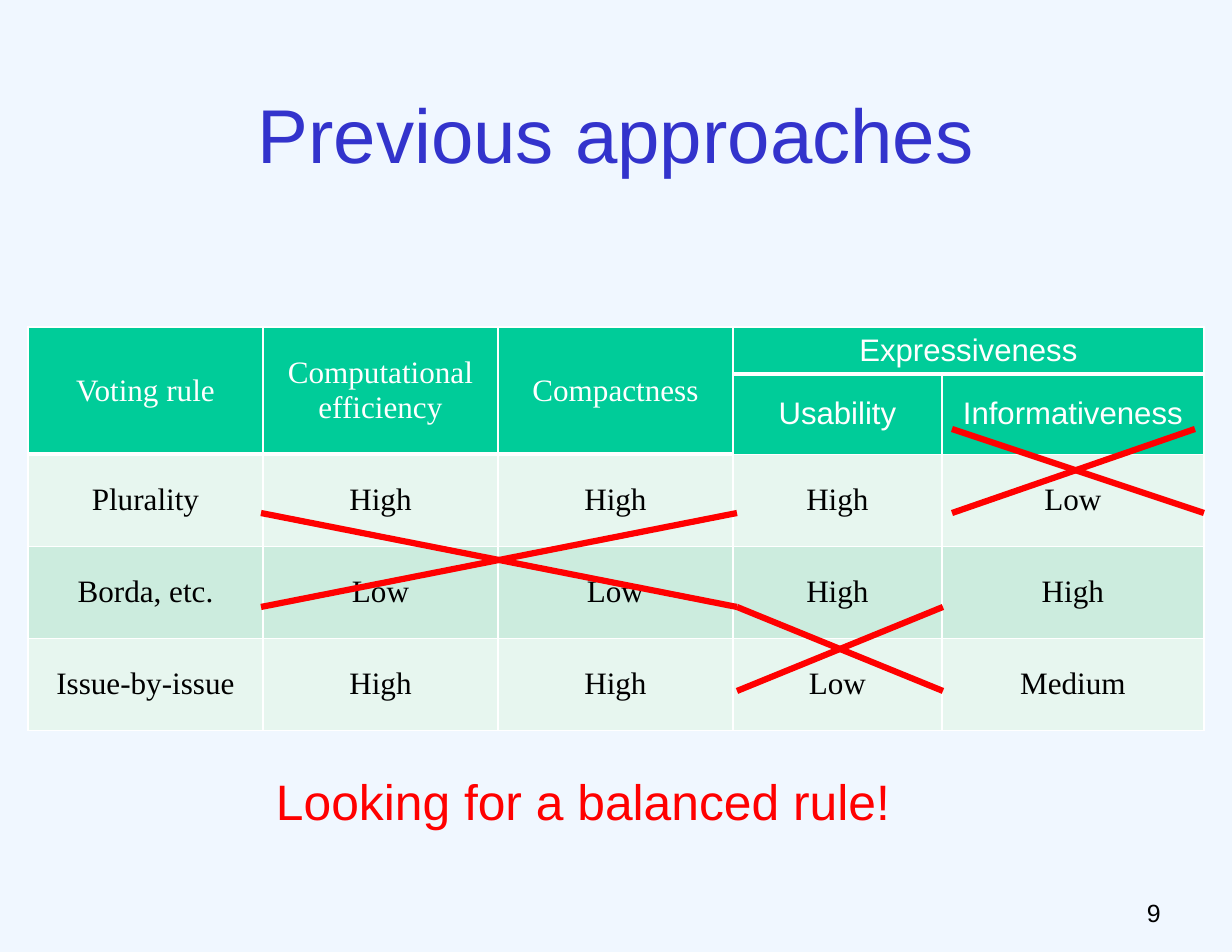
"""Build the slide that compares voting rules in a table with crossed-out weak spots."""
from dataclasses import dataclass

from lxml import etree
from pptx import Presentation
from pptx import util as u
from pptx.dml.color import RGBColor
from pptx.enum import shapes, text
from pptx.oxml import ns

SCALE = 914400 / 112
COLORS = {
    "page": "F0F7FF", "title": "3333CC", "header": "00CC99", "light": "E7F6EF",
    "dark": "CCECDE", "white": "FFFFFF", "black": "000000", "red": "FF0000",
}
SANS, SERIF = "Arial", "Times New Roman"
COLUMNS = (235, 235, 235, 209, 262)
ROWS = (47, 79, 92, 92, 92)
HEADER_ROWS = 2
SPANNED = 3
CONTENT = (
    ("Voting rule", "Computational\nefficiency", "Compactness", "Expressiveness", ""),
    ("", "", "", "Usability", "Informativeness"),
    ("Plurality", "High", "High", "High", "Low"),
    ("Borda, etc.", "Low", "Low", "High", "High"),
    ("Issue-by-issue", "High", "High", "Low", "Medium"),
)


@dataclass(frozen=True)
class Style:
    size: int
    color: str
    font: str = SANS
    align: text.PP_ALIGN = text.PP_ALIGN.CENTER
    spacing: float = 1.0


@dataclass(frozen=True)
class Label:
    words: str
    left: int
    top: int
    width: int
    height: int
    style: Style
    anchor: text.MSO_ANCHOR = text.MSO_ANCHOR.TOP


@dataclass(frozen=True)
class Cross:
    left: int
    top: int
    right: int
    bottom: int
    rising_right: int


LABELS = (
    Label("9", 887, 884, 286, 65,
          Style(16, "black", align=text.PP_ALIGN.RIGHT, spacing=1.25)),
    Label("Previous approaches", 62, 38, 1107, 157,
          Style(49, "title", spacing=1.36), text.MSO_ANCHOR.MIDDLE),
    Label("Looking for a balanced rule!", 56, 747, 1055, 83,
          Style(32, "red", spacing=1.29)),
)
CROSSES = (
    Cross(952, 429, 1204, 513, 1195),
    Cross(261, 513, 737, 607, 737),
    Cross(737, 607, 943, 691, 943),
)


def px(length: int) -> int:
    return round(length * SCALE)


def color(name: str) -> RGBColor:
    return RGBColor.from_string(COLORS[name])


def write(frame, words: str, style: Style) -> None:
    for index, line in enumerate(words.split("\n")):
        para = frame.add_paragraph() if index else frame.paragraphs[0]
        para.alignment = style.align
        para.line_spacing = style.spacing
        span = para.add_run()
        span.text = line
        span.font.size = u.Pt(style.size)
        span.font.name = style.font
        span.font.color.rgb = color(style.color)


def draw_label(page, label: Label) -> None:
    box = page.shapes.add_textbox(
        px(label.left), px(label.top), px(label.width), px(label.height))
    frame = box.text_frame
    frame.word_wrap = True
    frame.vertical_anchor = label.anchor
    frame.margin_left = frame.margin_right = u.Inches(0.11)
    frame.margin_top = frame.margin_bottom = u.Inches(0.06)
    write(frame, label.words, label.style)


def draw_cross(page, cross: Cross) -> None:
    for start, end in ((cross.rising_right, cross.left), (cross.left, cross.right)):
        stroke = page.shapes.add_connector(
            shapes.MSO_CONNECTOR.STRAIGHT,
            px(start), px(cross.top), px(end), px(cross.bottom))
        stroke.line.color.rgb = color("red")
        stroke.line.width = u.Pt(4)
        etree.SubElement(stroke._element.spPr, ns.qn("a:effectLst"))


def has_thick_base(row: int, column: int) -> bool:
    return row == 0 or (row == 1 and column < SPANNED)


def set_borders(cell, top: int, bottom: int) -> None:
    properties = cell._tc.get_or_add_tcPr()
    widths = {"a:lnL": 1, "a:lnR": 1, "a:lnT": top, "a:lnB": bottom}
    for index, (tag, width) in enumerate(widths.items()):
        edge = etree.Element(ns.qn(tag), w=str(u.Pt(width)))
        fill = etree.SubElement(edge, ns.qn("a:solidFill"))
        etree.SubElement(fill, ns.qn("a:srgbClr"), val=COLORS["white"])
        properties.insert(index, edge)


def draw_table(page) -> None:
    table = page.shapes.add_table(
        len(ROWS), len(COLUMNS), px(28), px(327), px(sum(COLUMNS)), px(sum(ROWS))).table
    for column, width in zip(table.columns, COLUMNS):
        column.width = px(width)
    for row, height in zip(table.rows, ROWS):
        row.height = px(height)
    for row, line in enumerate(CONTENT):
        is_header = row < HEADER_ROWS
        fill = "header" if is_header else ("light", "dark")[row % 2]
        for column, words in enumerate(line):
            cell = table.cell(row, column)
            cell.fill.solid()
            cell.fill.fore_color.rgb = color(fill)
            cell.vertical_anchor = text.MSO_ANCHOR.MIDDLE
            top = 3 if row and has_thick_base(row - 1, column) else 1
            set_borders(cell, top, 3 if has_thick_base(row, column) else 1)
            if words:
                font = SANS if is_header and column >= SPANNED else SERIF
                write(cell.text_frame, words,
                      Style(20, "white" if is_header else "black", font))
    for column in range(SPANNED):
        table.cell(0, column).merge(table.cell(1, column))
    table.cell(0, SPANNED).merge(table.cell(0, SPANNED + 1))


def main() -> None:
    deck = Presentation()
    deck.slide_width, deck.slide_height = px(1232), px(952)
    page = deck.slides.add_slide(deck.slide_layouts[6])
    page.background.fill.solid()
    page.background.fill.fore_color.rgb = color("page")
    draw_table(page)
    for label in LABELS[:2]:
        draw_label(page, label)
    for cross in CROSSES:
        draw_cross(page, cross)
    draw_label(page, LABELS[2])
    deck.save("out.pptx")


if __name__ == "__main__":
    main()
